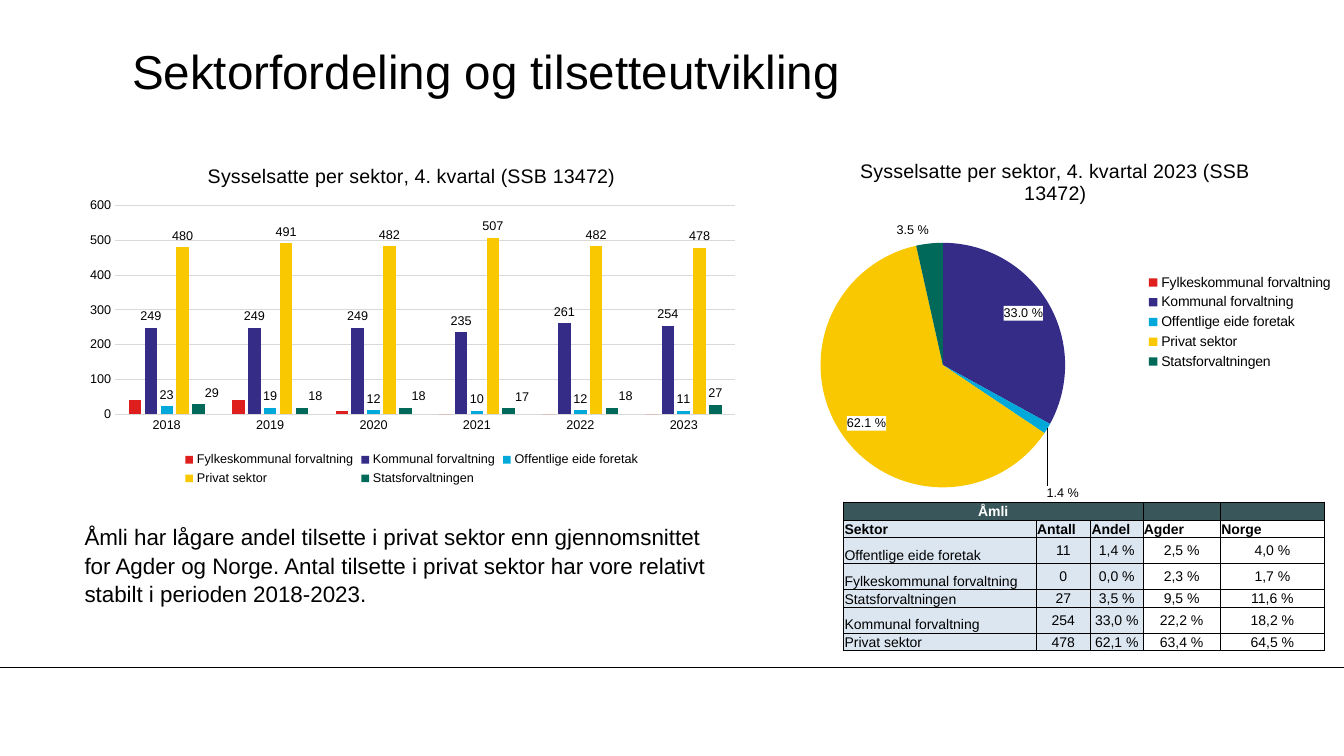
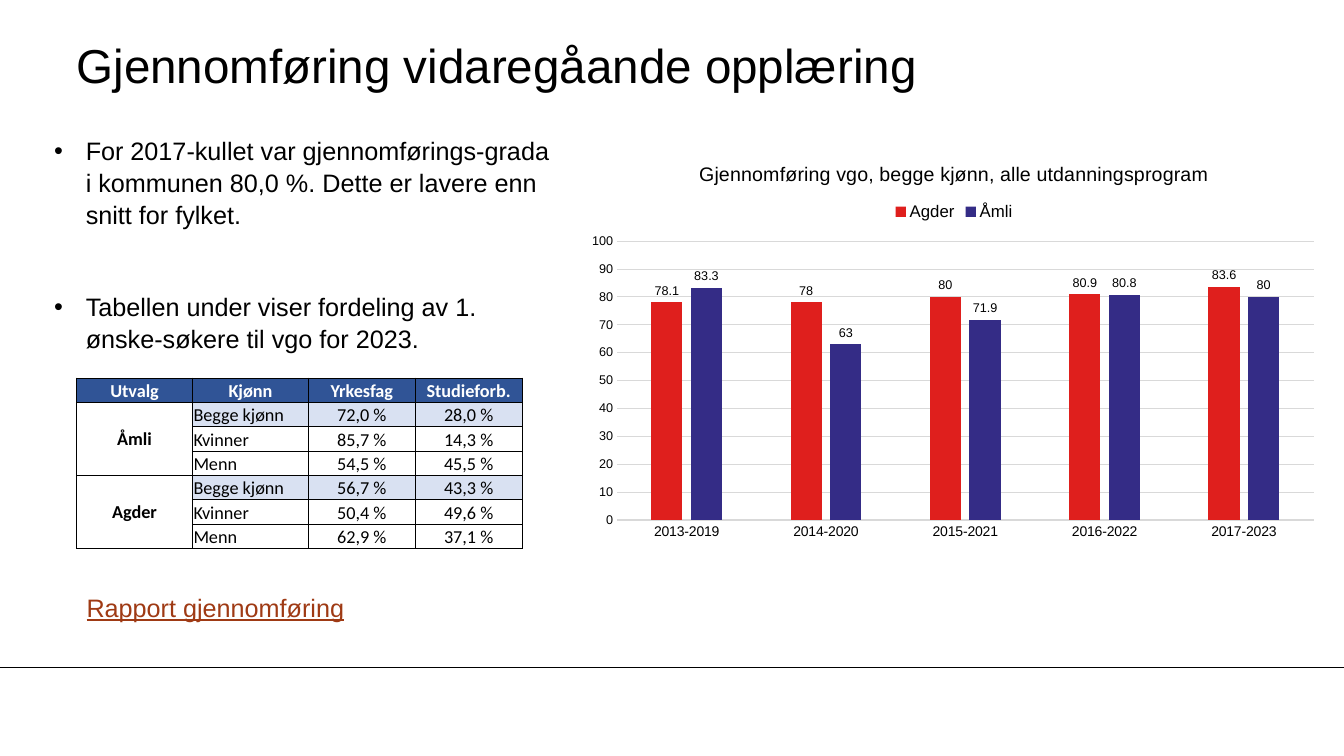
from dataclasses import dataclass
from typing import NamedTuple, Optional

from lxml.etree import SubElement
from pptx import Presentation
from pptx.chart.data import CategoryChartData
from pptx.dml.color import RGBColor
from pptx.enum.chart import XL_CHART_TYPE as ChartType
from pptx.enum.chart import XL_LABEL_POSITION as LabelPosition
from pptx.enum.chart import XL_LEGEND_POSITION as LegendPosition
from pptx.enum.chart import XL_TICK_MARK as TickMark
from pptx.enum.shapes import MSO_CONNECTOR as Connector
from pptx.enum.text import MSO_ANCHOR as Anchor
from pptx.enum.text import PP_ALIGN as Align
from pptx.oxml import parse_xml
from pptx.oxml.ns import nsdecls, qn
from pptx.util import Pt


@dataclass(frozen=True)
class Theme:
    font: str = "Arial"
    table_font: str = "Calibri"
    black: str = "000000"
    white: str = "FFFFFF"
    grid: str = "D9D9D9"
    link: str = "9F3A14"
    red: str = "DF1F1D"
    indigo: str = "342C86"
    cyan: str = "00A9DA"
    yellow: str = "FAC800"
    green: str = "00695A"
    teal_header: str = "39575B"
    pale_blue: str = "DCE6F1"
    blue_header: str = "305496"
    pale_lilac: str = "D9E1F2"
    title_size: float = 34
    chart_title_size: float = 14
    label_size: float = 9


THEME = Theme()


class Box(NamedTuple):
    left: float
    top: float
    width: float
    height: float

    def points(self) -> list:
        return [Pt(length) for length in self]


class Series(NamedTuple):
    name: str
    values: tuple
    color: str
    labelled: bool = True


class Cell(NamedTuple):
    text: str
    fill: Optional[str] = None
    bold: bool = False
    color: str = THEME.black
    align: Align = Align.CENTER
    anchor: Anchor = Anchor.BOTTOM


@dataclass(frozen=True)
class ColumnChart:
    title: str
    box: Box
    plot_area: Box  # fractions of the chart
    categories: tuple
    series: tuple
    maximum: float
    step: float
    legend: LegendPosition
    legend_size: float
    category_size: float


def rgb(color: str) -> RGBColor:
    return RGBColor.from_string(color)


def set_font(font, size: float, color: str = THEME.black, name: str = THEME.font, bold: bool = False) -> None:
    font.name, font.size, font.bold = name, Pt(size), bold
    font.color.rgb = rgb(color)


# Titles, rule and running text
def add_titled_slide(presentation, title: str, left: float, top: float):
    slide = presentation.slides.add_slide(presentation.slide_layouts[5])
    shape = slide.shapes.title
    shape.left, shape.top, shape.width, shape.height = Box(left, top, 799.2, 54).points()
    frame = shape.text_frame
    frame.text = title
    frame.word_wrap = True
    frame.vertical_anchor = Anchor.MIDDLE
    frame.margin_left = frame.margin_right = frame.margin_top = frame.margin_bottom = 0
    paragraph = frame.paragraphs[0]
    paragraph.alignment = Align.LEFT
    set_font(paragraph.font, THEME.title_size)
    return slide


def move_rule_to_master(presentation, slide) -> None:
    """Draw the footer rule and hand it to the master, so all slides share it."""
    rule = slide.shapes.add_connector(Connector.STRAIGHT, 0, Pt(476.6), presentation.slide_width, Pt(476.6))
    rule.line.color.rgb = rgb(THEME.black)
    rule.line.width = Pt(0.75)
    SubElement(rule.element.spPr, qn("a:effectLst"))
    rule.element.nvCxnSpPr.cNvPr.set("id", "20")
    presentation.slide_master.shapes.element.append(rule.element)


def add_text(slide, box: Box, texts: tuple, size: float, color: str = THEME.black,
             bullet: bool = False, gap: float = 0, underline: bool = False) -> None:
    frame = slide.shapes.add_textbox(*box.points()).text_frame
    frame.word_wrap = True
    for index, text in enumerate(texts):
        paragraph = frame.add_paragraph() if index else frame.paragraphs[0]
        paragraph.text = text
        paragraph.line_spacing = 1.05
        if index:
            paragraph.space_before = Pt(gap)
        if bullet:
            properties = paragraph._p.get_or_add_pPr()
            properties.set("marL", str(Pt(22.5)))
            properties.set("indent", str(-Pt(22.5)))
            SubElement(properties, qn("a:buFont"), typeface=THEME.font)
            SubElement(properties, qn("a:buChar"), char="•")
        set_font(paragraph.font, size, color)
        if underline:
            paragraph.font.underline = True


# Tables
def add_borders(cell) -> None:
    properties = cell._tc.get_or_add_tcPr()
    for side in ("lnL", "lnR", "lnT", "lnB"):
        line = SubElement(properties, qn(f"a:{side}"), w=str(Pt(0.5)))
        fill = SubElement(line, qn("a:solidFill"))
        SubElement(fill, qn("a:srgbClr"), val=THEME.black)


def format_cell(cell, content: Cell, size: float, font: str) -> None:
    add_borders(cell)
    cell.margin_left = cell.margin_right = cell.margin_top = Pt(0.72)
    cell.margin_bottom = 0
    cell.vertical_anchor = content.anchor
    if content.fill:
        cell.fill.solid()
        cell.fill.fore_color.rgb = rgb(content.fill)
    else:
        cell.fill.background()
    paragraph = cell.text_frame.paragraphs[0]
    paragraph.alignment = content.align
    if content.text:
        paragraph.text = content.text
    else:
        SubElement(paragraph._p, qn("a:endParaRPr"), sz=str(int(size * 100)))
    set_font(paragraph.font, size, content.color, font, content.bold)


def add_table(slide, left: float, top: float, widths: tuple, heights: tuple, rows: list,
              size: float, font: str):
    box = Box(left, top, sum(widths), sum(heights))
    table = slide.shapes.add_table(len(heights), len(widths), *box.points()).table
    table.first_row = table.horz_banding = False
    for column, width in zip(table.columns, widths):
        column.width = Pt(width)
    for row, height, contents in zip(table.rows, heights, rows):
        row.height = Pt(height)
        for cell, content in zip(row.cells, contents):
            format_cell(cell, content, size, font)
    return table


# Charts
def add_chart(slide, kind: ChartType, title: str, box: Box, plot_area: Box, categories: tuple,
              series: tuple, legend: LegendPosition, legend_size: float):
    data = CategoryChartData()
    data.categories = categories
    for item in series:
        data.add_series(item.name, item.values)
    chart = slide.shapes.add_chart(kind, *box.points(), data).chart
    set_font(chart.font, 10)
    chart.has_title = True
    chart.chart_title.text_frame.text = title
    set_font(chart.chart_title.text_frame.paragraphs[0].font, THEME.chart_title_size)
    chart.has_legend = True
    chart.legend.position = legend
    chart.legend.include_in_layout = False
    set_font(chart.legend.font, legend_size)
    fractions = "".join(f'<c:{tag} val="{value}"/>' for tag, value in zip("xywh", plot_area))
    layout = parse_xml(
        f'<c:layout {nsdecls("c")}><c:manualLayout><c:layoutTarget val="inner"/>'
        f'<c:xMode val="edge"/><c:yMode val="edge"/>{fractions}</c:manualLayout></c:layout>')
    area = chart._chartSpace.chart.plotArea
    for old_layout in area.findall(qn("c:layout")):
        area.remove(old_layout)
    area.insert(0, layout)
    return chart


def add_point_label(labels, order: int, index: int, kind: str, number_format: str, position: str = "outEnd",
                    shift: tuple = (0, 0), fill: Optional[str] = None) -> None:
    """Insert a label of one point; shift is in fractions of the chart."""
    layout = "<c:layout/>"
    if any(shift):
        layout = (f'<c:layout><c:manualLayout><c:x val="{shift[0]}"/><c:y val="{shift[1]}"/>'
                  '</c:manualLayout></c:layout>')
    paint = f'<a:solidFill><a:srgbClr val="{fill}"/></a:solidFill>' if fill else "<a:noFill/>"
    shown = "".join(f'<c:show{name} val="{int(name == kind)}"/>' for name in
                    ("LegendKey", "Val", "CatName", "SerName", "Percent", "BubbleSize"))
    labels._element.insert(order, parse_xml(
        f'<c:dLbl {nsdecls("c", "a")}><c:idx val="{index}"/>{layout}'
        f'<c:numFmt formatCode="{number_format}" sourceLinked="0"/><c:spPr>{paint}</c:spPr>'
        f'<c:txPr><a:bodyPr/><a:p><a:pPr><a:defRPr sz="{int(THEME.label_size * 100)}" b="0">'
        f'<a:solidFill><a:srgbClr val="{THEME.black}"/></a:solidFill><a:latin typeface="{THEME.font}"/>'
        f'</a:defRPr></a:pPr><a:endParaRPr/></a:p></c:txPr><c:dLblPos val="{position}"/>{shown}</c:dLbl>'))


def add_column_chart(slide, column: ColumnChart):
    chart = add_chart(slide, ChartType.COLUMN_CLUSTERED, column.title, column.box, column.plot_area,
                      column.categories, column.series, column.legend, column.legend_size)
    plot = chart.plots[0]
    plot.gap_width, plot.overlap, plot.vary_by_categories = 219, -27, False
    for series, item in zip(plot.series, column.series):
        series.format.fill.solid()
        series.format.fill.fore_color.rgb = rgb(item.color)
        if item.labelled:
            labels = series.data_labels
            labels.show_value = True
            labels.position = LabelPosition.OUTSIDE_END
            set_font(labels.font, THEME.label_size)
    category_axis, value_axis = chart.category_axis, chart.value_axis
    for axis, size in ((category_axis, column.category_size), (value_axis, THEME.label_size)):
        axis.major_tick_mark = axis.minor_tick_mark = TickMark.NONE
        set_font(axis.tick_labels.font, size)
    value_axis.minimum_scale, value_axis.maximum_scale = 0, column.maximum
    value_axis.major_unit = column.step
    value_axis.tick_labels.number_format = "#,##0"
    value_axis.tick_labels.number_format_is_linked = False
    value_axis.format.line.fill.background()
    for line in (category_axis.format.line, value_axis.major_gridlines.format.line):
        line.color.rgb = rgb(THEME.grid)
        line.width = Pt(0.75)
    return chart


SECTORS = (
    Series("Fylkeskommunal forvaltning", (40, 40, 10, 0, 0, 0), THEME.red, False),
    Series("Kommunal forvaltning", (249, 249, 249, 235, 261, 254), THEME.indigo),
    Series("Offentlige eide foretak", (23, 19, 12, 10, 12, 11), THEME.cyan),
    Series("Privat sektor", (480, 491, 482, 507, 482, 478), THEME.yellow),
    Series("Statsforvaltningen", (29, 18, 18, 17, 18, 27), THEME.green),
)
SECTOR_ROWS = (
    ("Offentlige eide foretak", "11", "1,4 %", "2,5 %", "4,0 %"),
    ("Fylkeskommunal forvaltning", "0", "0,0 %", "2,3 %", "1,7 %"),
    ("Statsforvaltningen", "27", "3,5 %", "9,5 %", "11,6 %"),
    ("Kommunal forvaltning", "254", "33,0 %", "22,2 %", "18,2 %"),
    ("Privat sektor", "478", "62,1 %", "63,4 %", "64,5 %"),
)
CHOICE_ROWS = (
    ("Åmli", "Begge kjønn", "72,0 %", "28,0 %"),
    ("", "Kvinner", "85,7 %", "14,3 %"),
    ("", "Menn", "54,5 %", "45,5 %"),
    ("Agder", "Begge kjønn", "56,7 %", "43,3 %"),
    ("", "Kvinner", "50,4 %", "49,6 %"),
    ("", "Menn", "62,9 %", "37,1 %"),
)


def add_sector_pie(slide) -> None:
    shares = (Series("Series 1", (0, 33, 1.4, 62.1, 3.5), THEME.black),)
    chart = add_chart(slide, ChartType.PIE, "Sysselsatte per sektor, 4. kvartal 2023 (SSB 13472)",
                      Box(547.9, 101.5, 411.8, 257), Box(0.09, 0.28, 0.43, 0.68),
                      tuple(sector.name for sector in SECTORS), shares, LegendPosition.RIGHT, 10)
    plot = chart.plots[0]
    plot.vary_by_categories = True
    series = plot.series[0]
    for index, sector in enumerate(SECTORS):
        fill = series.points[index].format.fill
        fill.solid()
        fill.fore_color.rgb = rgb(sector.color)
    labels = series.data_labels
    labels.show_value, labels.show_percentage = False, True
    percent = r"0.0\ %"
    labels.number_format, labels.number_format_is_linked = percent, False
    set_font(labels.font, THEME.label_size)
    labels._element.insert(0, parse_xml(f'<c:dLbl {nsdecls("c")}><c:idx val="0"/><c:delete val="1"/></c:dLbl>'))
    add_point_label(labels, 1, 1, "Percent", percent, "inEnd", fill=THEME.white)
    add_point_label(labels, 2, 2, "Percent", percent, shift=(-0.01, 0.15))
    add_point_label(labels, 3, 3, "Percent", percent, "inEnd", fill=THEME.white)
    add_point_label(labels, 4, 4, "Percent", percent)


def add_sector_table(slide) -> None:
    def fill(column: int) -> Optional[str]:
        return THEME.pale_blue if column < 3 else None

    header = [Cell(text, THEME.teal_header, True, THEME.white) for text in ("Åmli", "", "", "", "")]
    names = [Cell(text, fill(column), True, align=Align.LEFT)
             for column, text in enumerate(("Sektor", "Antall", "Andel", "Agder", "Norge"))]
    body = [[Cell(text, fill(column), anchor=Anchor.MIDDLE) if column
             else Cell(text, fill(column), align=Align.LEFT)
             for column, text in enumerate(row)] for row in SECTOR_ROWS]
    low, high = 12.7, 18.4
    table = add_table(slide, 602.6, 358.6, (137.5, 38.9, 37.4, 55.4, 74.2),
                      (low, low, high, high, low, high, low), [header, names, *body], 10, THEME.font)
    table.cell(0, 0).merge(table.cell(0, 2))


def add_choice_table(slide) -> None:
    header = [Cell(text, THEME.blue_header, True, THEME.white)
              for text in ("Utvalg", "Kjønn", "Yrkesfag", "Studieforb.")]
    body = []
    for area, gender, *shares in CHOICE_ROWS:
        fill = THEME.pale_lilac if area else THEME.white
        body.append([Cell(area, THEME.white, True, anchor=Anchor.MIDDLE),
                     Cell(gender, fill, align=Align.LEFT), *(Cell(share, fill) for share in shares)])
    table = add_table(slide, 54.7, 270, (82.8, 82.8, 76.3, 76.3), (17.4,) * 7,
                      [header, *body], 13, THEME.table_font)
    for row in (1, 4):
        table.cell(row, 0).merge(table.cell(row + 2, 0))


def build_sector_slide(presentation) -> None:
    slide = add_titled_slide(presentation, "Sektorfordeling og tilsetteutvikling", 94.3, 23)
    move_rule_to_master(presentation, slide)
    add_text(slide, Box(53.3, 369.4, 461.5, 65.5), (
        "Åmli har lågare andel tilsette i privat sektor enn gjennomsnittet for Agder og Norge. "
        "Antal tilsette i privat sektor har vore relativt stabilt i perioden 2018-2023.",), 16)
    add_sector_table(slide)
    add_sector_pie(slide)
    chart = add_column_chart(slide, ColumnChart(
        "Sysselsatte per sektor, 4. kvartal (SSB 13472)", Box(53.3, 105.1, 481.7, 244.8),
        Box(0.06, 0.17, 0.92, 0.61), tuple(str(year) for year in range(2018, 2024)), SECTORS,
        600, 100, LegendPosition.BOTTOM, 9, 9))
    state_labels = chart.plots[0].series[4].data_labels
    for index in range(5):
        add_point_label(state_labels, index, index, "Val", "General", shift=(0.02, 0))


def build_completion_slide(presentation) -> None:
    slide = add_titled_slide(presentation, "Gjennomføring vidaregåande opplæring", 54.7, 19.4)
    add_text(slide, Box(31.7, 92.2, 372.2, 159.8), (
        "For 2017-kullet var gjennomførings-grada i kommunen 80,0 %. Dette er lavere enn snitt for fylket.",
        "Tabellen under viser fordeling av 1. ønske-søkere til vgo for 2023."), 18, bullet=True, gap=43.5)
    add_choice_table(slide)
    add_text(slide, Box(54.7, 418.3, 202.3, 28.8), ("Rapport gjennomføring",), 18, THEME.link, underline=True)
    add_column_chart(slide, ColumnChart(
        "Gjennomføring vgo, begge kjønn, alle utdanningsprogram", Box(414, 103, 535, 288.7),
        Box(0.05, 0.24, 0.93, 0.69), tuple(f"{year}-{year + 6}" for year in range(2013, 2018)),
        (Series("Agder", (78.1, 78, 80, 80.9, 83.6), THEME.red),
         Series("Åmli", (83.3, 63, 71.9, 80.8, 80), THEME.indigo)),
        100, 10, LegendPosition.TOP, 12, 10))


def main() -> None:
    presentation = Presentation()
    presentation.slide_width, presentation.slide_height = Pt(960), Pt(540)
    build_sector_slide(presentation)
    build_completion_slide(presentation)
    presentation.save("out.pptx")


if __name__ == "__main__":
    main()
